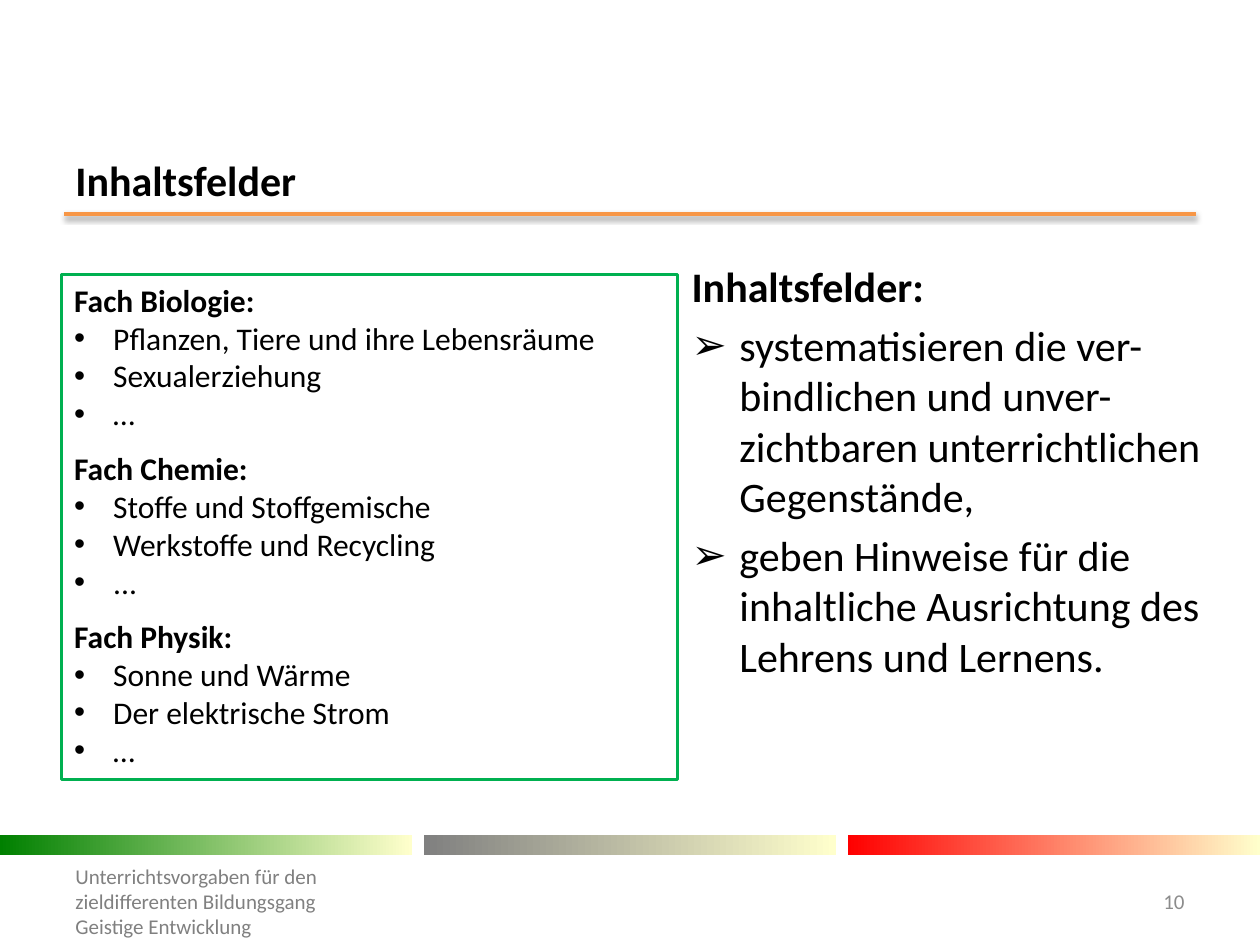
from dataclasses import dataclass

from lxml import etree
from pptx import Presentation
from pptx.dml.color import RGBColor
from pptx.enum.shapes import MSO_CONNECTOR, MSO_SHAPE
from pptx.enum.text import MSO_ANCHOR, PP_ALIGN
from pptx.oxml.ns import qn
from pptx.util import Inches, Pt

RECT = MSO_SHAPE.RECTANGLE
LINE = MSO_CONNECTOR.STRAIGHT
TOP, MIDDLE = MSO_ANCHOR.TOP, MSO_ANCHOR.MIDDLE
LEFT, RIGHT = PP_ALIGN.LEFT, PP_ALIGN.RIGHT
WIDE, HIGH = Inches(10), Inches(7.5)


@dataclass(frozen=True)
class Theme:
    font: str = "Calibri"
    ink: str = "000000"
    paper: str = "FFFFFF"
    rule: str = "F79646"
    frame: str = "00B050"
    foot: str = "808080"
    page: str = "8C8C8C"
    fade: str = "FFFFCC"
    bars: tuple[str, ...] = ("008000", "808080", "FF0000")
    large: int = 24
    normal: int = 18
    small: int = 12


THEME = Theme()


@dataclass(frozen=True)
class Area:
    """Position and size in percent of the slide."""
    x: float
    y: float
    w: float
    h: float

    def box(self) -> tuple[int, int, int, int]:
        return (across(self.x), down(self.y), across(self.w), down(self.h))


@dataclass(frozen=True)
class Para:
    text: str
    bold: bool = False
    mark: str = ""
    gap: float = 0


@dataclass(frozen=True)
class Style:
    size: int
    color: str = THEME.ink
    indent: float = 0
    align: PP_ALIGN = LEFT
    anchor: MSO_ANCHOR = TOP


def across(share: float) -> int:
    return round(WIDE * share / 100)


def down(share: float) -> int:
    return round(HIGH * share / 100)


def rgb(code: str) -> RGBColor:
    return RGBColor.from_string(code)


def add_mark(para, mark: str, indent: float) -> None:
    props = para._p.get_or_add_pPr()
    props.set("marL", str(Inches(indent)))
    props.set("indent", str(-Inches(indent)))
    etree.SubElement(props, qn("a:buFont")).set("typeface", "Arial")
    etree.SubElement(props, qn("a:buChar")).set("char", mark)


def write(shape, paras: list[Para], style: Style) -> None:
    frame = shape.text_frame
    frame.word_wrap = True
    frame.vertical_anchor = style.anchor
    for i, item in enumerate(paras):
        para = frame.add_paragraph() if i else frame.paragraphs[0]
        para.text = item.text
        para.alignment = style.align
        if item.mark:
            add_mark(para, item.mark, style.indent)
        if item.gap:
            para.space_before = Pt(item.gap)
        font = para.font
        font.name, font.size, font.bold = THEME.font, Pt(style.size), item.bold
        font.color.rgb = rgb(style.color)


def add_text(slide, area: Area, paras: list[Para], style: Style) -> None:
    write(slide.shapes.add_textbox(*area.box()), paras, style)


def add_rect(slide, area: Area):
    shape = slide.shapes.add_shape(RECT, *area.box())
    shape.shadow.inherit = False
    shape.line.fill.background()
    return shape


def add_bar(slide, area: Area, color: str) -> None:
    fill = add_rect(slide, area).fill
    fill.gradient()
    fill.gradient_angle = 0
    for stop, code in zip(fill.gradient_stops, (color, THEME.fade)):
        stop.color.rgb = rgb(code)


def add_rule(slide, x: float, y: float) -> None:
    rule = slide.shapes.add_connector(
        LINE, across(x), down(y), across(100 - x), down(y))
    rule.line.color.rgb = rgb(THEME.rule)
    rule.line.width = Pt(2)
    # Soft shadow below the rule
    props = rule._element.spPr
    effects = etree.SubElement(props, qn("a:effectLst"))
    shade = etree.SubElement(
        effects, qn("a:outerShdw"), blurRad=str(Pt(3.1)), dist=str(Pt(1.6)),
        dir="5400000", rotWithShape="0")
    color = etree.SubElement(shade, qn("a:srgbClr"), val=THEME.ink)
    etree.SubElement(color, qn("a:alpha"), val="38000")


TOPICS = {
    "Fach Biologie:": ("Pflanzen, Tiere und ihre Lebensräume",
                       "Sexualerziehung", "…"),
    "Fach Chemie:": ("Stoffe und Stoffgemische",
                     "Werkstoffe und Recycling", "..."),
    "Fach Physik:": ("Sonne und Wärme", "Der elektrische Strom", "…"),
}
AIMS = (
    "systematisieren die ver-bindlichen und unver-zichtbaren "
    "unterrichtlichen Gegenstände,",
    "geben Hinweise für die inhaltliche Ausrichtung des Lehrens und Lernens.",
)
FOOT = ("Unterrichtsvorgaben für den", "zieldifferenten Bildungsgang",
        "Geistige Entwicklung")


def main() -> None:
    deck = Presentation()
    deck.slide_width, deck.slide_height = WIDE, HIGH
    slide = deck.slides.add_slide(deck.slide_layouts[6])

    # Heading with rule
    add_rule(slide, 5.1, 22.67)
    add_text(slide, Area(5, 16.4, 90, 5.2), [Para("Inhaltsfelder", True)],
             Style(THEME.large, anchor=MIDDLE))

    # Three fading bars, spread evenly over the width
    width = 32.7
    step = (100 - width) / (len(THEME.bars) - 1)
    for i, color in enumerate(THEME.bars):
        add_bar(slide, Area(i * step, 88.4, width, 2.13), color)

    # Aims on the right
    body = add_rect(slide, Area(53.9, 26.93, 42.5, 56.67))
    body.fill.solid()
    body.fill.fore_color.rgb = rgb(THEME.paper)
    aims = [Para("Inhaltsfelder:", True)]
    aims += [Para(aim, mark="➢", gap=4.8) for aim in AIMS]
    write(body, aims, Style(THEME.large, indent=0.38))

    # Framed subjects on the left
    card = add_rect(slide, Area(4.9, 29.07, 48.9, 53.47))
    card.fill.background()
    card.line.color.rgb = rgb(THEME.frame)
    card.line.width = Pt(1.75)
    lines = []
    for head, items in TOPICS.items():
        lines.append(Para(head, True, gap=9.75 if lines else 0))
        lines += [Para(item, mark="•") for item in items]
    write(card, lines, Style(THEME.normal, indent=0.31))

    # Footer and page number
    add_text(slide, Area(5, 92.67, 56.8, 5.33), [Para(row) for row in FOOT],
             Style(THEME.small, THEME.foot, anchor=MIDDLE))
    add_text(slide, Area(88.6, 92.67, 6.4, 5.33), [Para("10")],
             Style(THEME.small, THEME.page, align=RIGHT, anchor=MIDDLE))

    deck.save("out.pptx")


if __name__ == "__main__":
    main()
